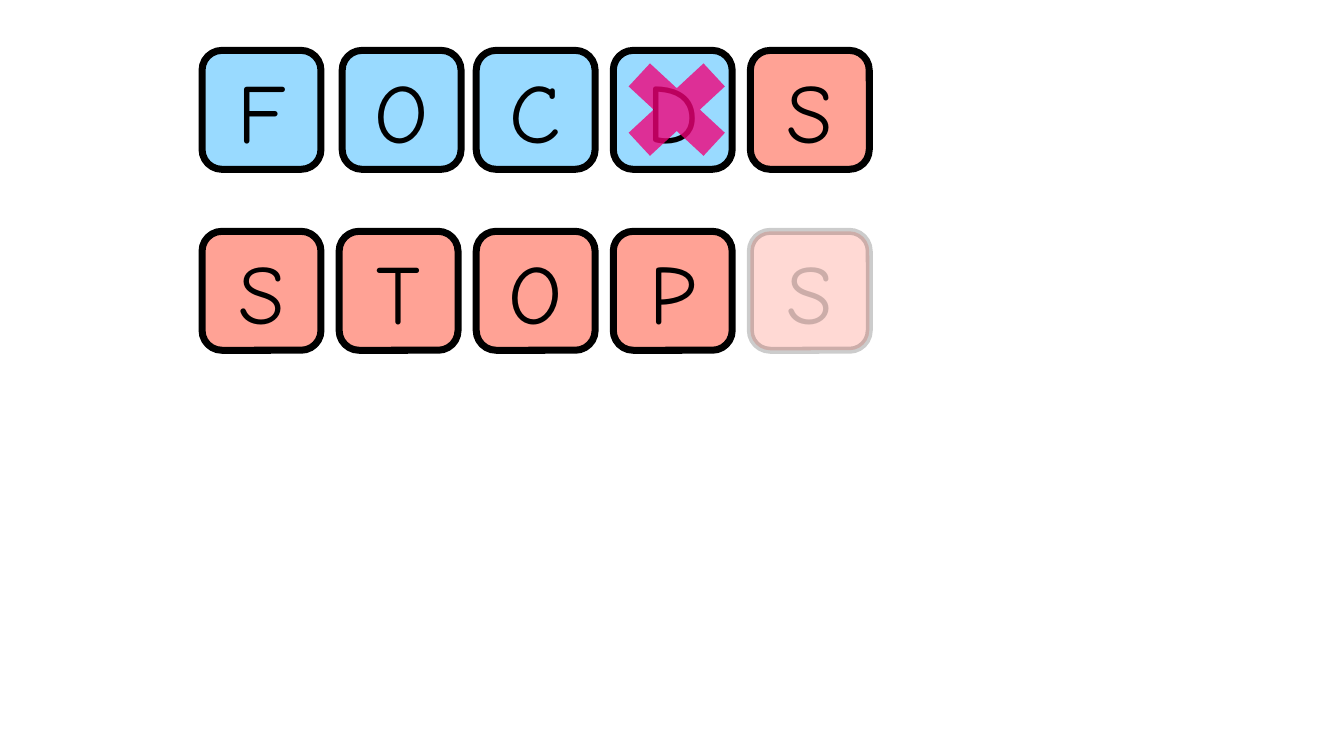
from dataclasses import dataclass

from lxml import etree
from pptx import Presentation
from pptx import util as u
from pptx.dml.color import RGBColor
from pptx.enum import shapes, text
from pptx.oxml.ns import qn


@dataclass(frozen=True)
class Theme:
    blue: str = "99DAFF"
    coral: str = "FFA295"
    ink: str = "000000"
    cross: str = "F10079"
    font: str = "Comic Neue"
    letter_size: int = 120
    outline: int = 10


TILE_SIZE = 2.36
TILE_PITCH = 2.72
TILES_LEFT = 4.01
FOCUS_TOP = 1
STOP_TOP = 4.59


class SlideBuilder:
    def __init__(self, slide, theme):
        self.slide = slide
        self.theme = theme

    def set_opacity(self, shape, query, percent):
        """Give every RGB colour matched by the XPath query an alpha value."""
        for color in shape.element.xpath(query):
            etree.SubElement(color, qn("a:alpha")).set("val", str(percent * 1000))

    def add_shape(self, kind, left, top, width, height, color):
        shape = self.slide.shapes.add_shape(
            kind, u.Inches(left), u.Inches(top), u.Inches(width), u.Inches(height))
        shape.shadow.inherit = False
        shape.fill.solid()
        shape.fill.fore_color.rgb = RGBColor.from_string(color)
        return shape

    def add_tile(self, letter, column, top, color, nudge=0, faded=False):
        """Draw a letter tile in a grid column, shifted right by nudge inches."""
        left = TILES_LEFT + column * TILE_PITCH + nudge
        tile = self.add_shape(shapes.MSO_SHAPE.ROUNDED_RECTANGLE,
                              left, top, TILE_SIZE, TILE_SIZE, color)
        ink = RGBColor.from_string(self.theme.ink)
        tile.line.color.rgb = ink
        tile.line.width = u.Pt(self.theme.outline)

        frame = tile.text_frame
        frame.text = letter
        frame.word_wrap = True
        frame.auto_size = text.MSO_AUTO_SIZE.SHAPE_TO_FIT_TEXT
        frame.vertical_anchor = text.MSO_ANCHOR.MIDDLE
        frame.margin_left = frame.margin_right = u.Inches(0.06)
        frame.margin_top = frame.margin_bottom = u.Inches(0.06)
        paragraph = frame.paragraphs[0]
        paragraph.alignment = text.PP_ALIGN.CENTER
        font = paragraph.runs[0].font
        font.name = self.theme.font
        font.size = u.Pt(self.theme.letter_size)
        font.color.rgb = ink

        if faded:
            self.set_opacity(tile, "./p:spPr/a:solidFill/a:srgbClr", 40)
            self.set_opacity(tile, "./p:spPr/a:ln//a:srgbClr | ./p:txBody//a:srgbClr", 20)

    def add_cross(self, left, top, width, height):
        cross = self.add_shape(shapes.MSO_SHAPE.MATH_MULTIPLY,
                               left, top, width, height, self.theme.cross)
        cross.line.fill.background()
        self.set_opacity(cross, "./p:spPr/a:solidFill/a:srgbClr", 78)


def main():
    presentation = Presentation()
    presentation.slide_width = u.Inches(26.67)
    presentation.slide_height = u.Inches(15)
    theme = Theme()
    blank_layout = presentation.slide_layouts[6]
    builder = SlideBuilder(presentation.slides.add_slide(blank_layout), theme)

    for column, letter in enumerate("FOCDS"):
        color = theme.coral if letter == "S" else theme.blue
        nudge = 0.06 if letter == "O" else 0
        builder.add_tile(letter, column, FOCUS_TOP, color, nudge=nudge)
    for column, letter in enumerate("STOPS"):
        builder.add_tile(letter, column, STOP_TOP, theme.coral, faded=column == 4)
    builder.add_cross(12, 0.85, 2.86, 2.65)

    presentation.save("out.pptx")


if __name__ == "__main__":
    main()
